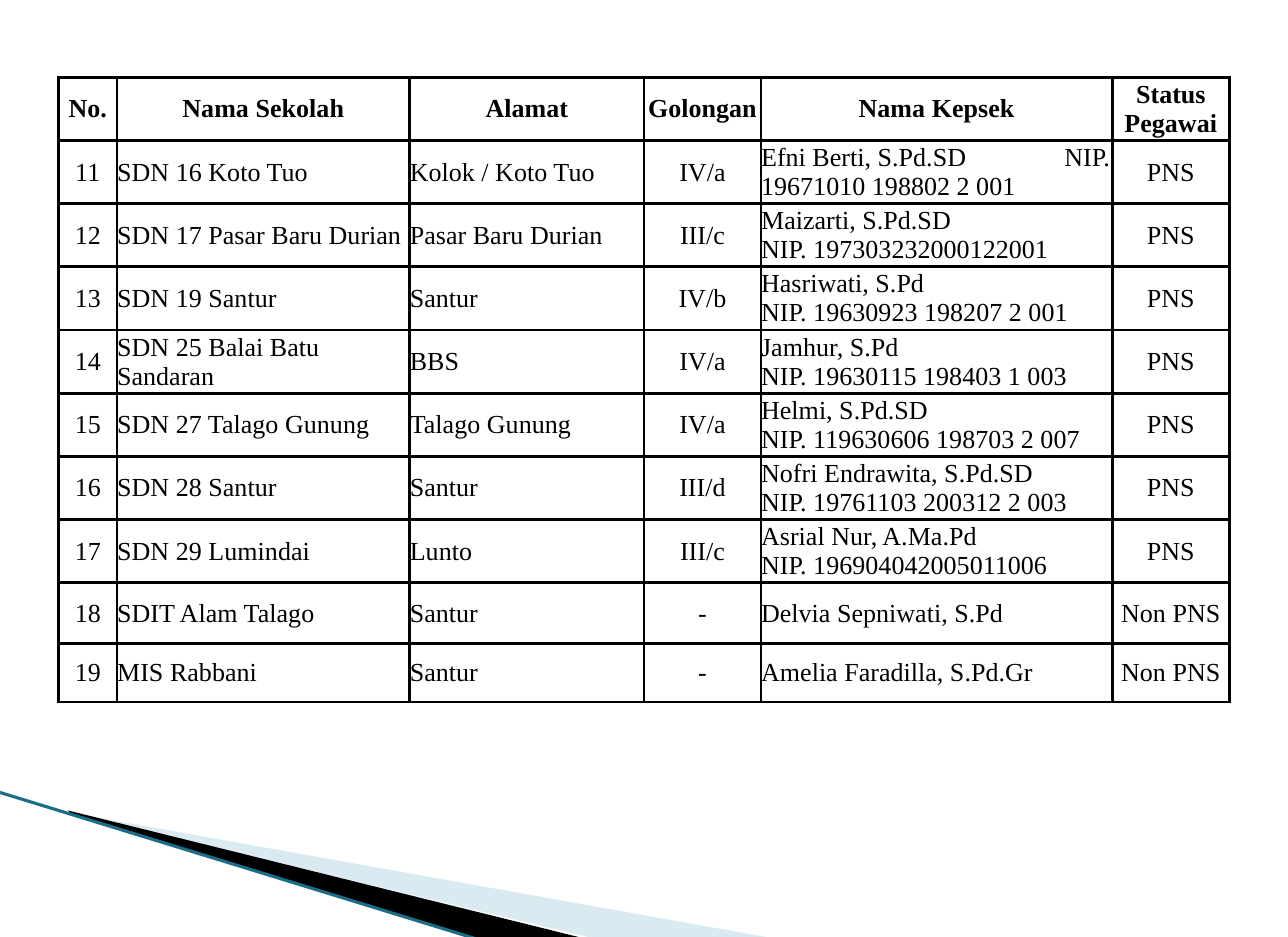
import pptx
import pptx.dml.color
import pptx.enum.text
import pptx.oxml
import pptx.oxml.ns
import pptx.util

Inches = pptx.util.Inches
Pt = pptx.util.Pt
RGBColor = pptx.dml.color.RGBColor
ALIGN = pptx.enum.text.PP_ALIGN

BLACK = RGBColor(0x00, 0x00, 0x00)
PALE_BLUE = RGBColor(0xA0, 0xCB, 0xDC)
TEAL = RGBColor(0x1B, 0x6E, 0x86)
FONT = "Times New Roman"
NS = pptx.oxml.ns.nsdecls("a")

COLUMN_WIDTHS = [0.25, 1.25, 1, 0.5, 1.5, 0.5]
ROW_HEIGHTS = [0.27] * 8 + [0.26, 0.25]
LEFT_COLUMNS = {1, 2, 4}
HEADERS = ["No.", "Nama Sekolah", "Alamat", "Golongan", "Nama Kepsek",
           "Status Pegawai"]
FIRST_NUMBER = 11
# School, address, grade, headmaster, employment status
SCHOOLS = [
    ("SDN 16 Koto Tuo", "Kolok / Koto Tuo", "IV/a",
     "Efni Berti, S.Pd.SD\tNIP.\n19671010 198802 2 001", "PNS"),
    ("SDN 17 Pasar Baru Durian", "Pasar Baru Durian", "III/c",
     "Maizarti, S.Pd.SD\nNIP. 197303232000122001", "PNS"),
    ("SDN 19 Santur", "Santur", "IV/b",
     "Hasriwati, S.Pd\nNIP. 19630923 198207 2 001", "PNS"),
    ("SDN 25 Balai Batu Sandaran", "BBS", "IV/a",
     "Jamhur, S.Pd\nNIP. 19630115 198403 1 003", "PNS"),
    ("SDN 27 Talago Gunung", "Talago Gunung", "IV/a",
     "Helmi, S.Pd.SD\nNIP. 119630606 198703 2 007", "PNS"),
    ("SDN 28 Santur", "Santur", "III/d",
     "Nofri Endrawita, S.Pd.SD\nNIP. 19761103 200312 2 003", "PNS"),
    ("SDN 29 Lumindai", "Lunto", "III/c",
     "Asrial Nur, A.Ma.Pd\nNIP. 196904042005011006", "PNS"),
    ("SDIT Alam Talago", "Santur", "-", "Delvia Sepniwati, S.Pd", "Non PNS"),
    ("MIS Rabbani", "Santur", "-", "Amelia Faradilla, S.Pd.Gr", "Non PNS"),
]


def write_text(frame, text, *, bold=False, align=ALIGN.LEFT, size=8,
               color=BLACK, tab_at=1.49):
    """Write one paragraph per line; a tab sends text to a right tab stop."""
    frame.text = text
    for paragraph in frame.paragraphs:
        paragraph.alignment = align
        if "\t" in paragraph.text:
            paragraph._p.get_or_add_pPr().append(pptx.oxml.parse_xml(
                f'<a:tabLst {NS}><a:tab pos="{Inches(tab_at)}" algn="r"/>'
                '</a:tabLst>'))
        for run in paragraph.runs:
            run.font.name = FONT
            run.font.size = Pt(size)
            run.font.bold = bold
            run.font.color.rgb = color


def add_wedge(slide, points, color, opacity=100):
    builder = slide.shapes.build_freeform(
        Inches(points[0][0]), Inches(points[0][1]))
    builder.add_line_segments([(Inches(x), Inches(y)) for x, y in points[1:]])
    wedge = builder.convert_to_shape()
    wedge.shadow.inherit = False
    wedge.line.fill.background()
    wedge.fill.solid()
    wedge.fill.fore_color.rgb = color
    if opacity < 100:
        color_element = wedge._element.spPr.find(
            ".//" + pptx.oxml.ns.qn("a:srgbClr"))
        color_element.append(pptx.oxml.parse_xml(
            f'<a:alpha {NS} val="{opacity * 1000}"/>'))


def add_edge_line(slide, start, end):
    edge = slide.shapes.add_connector(
        pptx.enum.shapes.MSO_CONNECTOR.STRAIGHT,
        *(Inches(value) for value in start + end))
    edge.line.color.rgb = TEAL
    edge.line.width = Pt(0.95)
    edge._element.spPr.append(pptx.oxml.parse_xml(f"<a:effectLst {NS}/>"))


def set_borders(cell, width=1):
    properties = cell._tc.get_or_add_tcPr()
    for side in "LRTB":
        properties.append(pptx.oxml.parse_xml(
            f'<a:ln{side} {NS} w="{Pt(width)}"><a:solidFill>'
            f'<a:srgbClr val="{BLACK}"/></a:solidFill></a:ln{side}>'))


def add_school_table(slide):
    rows = [HEADERS] + [(str(number), *school) for number, school
                        in enumerate(SCHOOLS, FIRST_NUMBER)]
    table = slide.shapes.add_table(
        len(rows), len(HEADERS), Inches(0.25), Inches(0.33),
        Inches(sum(COLUMN_WIDTHS)), Inches(sum(ROW_HEIGHTS))).table
    table.first_row = table.horz_banding = False
    for column, width in zip(table.columns, COLUMN_WIDTHS):
        column.width = Inches(width)
    for r, (row, height) in enumerate(zip(rows, ROW_HEIGHTS)):
        table.rows[r].height = Inches(height)
        for c, text in enumerate(row):
            cell = table.cell(r, c)
            cell.margin_left = cell.margin_right = 0
            cell.margin_top = cell.margin_bottom = 0
            cell.vertical_anchor = pptx.enum.text.MSO_ANCHOR.MIDDLE
            set_borders(cell)
            cell.fill.background()
            is_left = r > 0 and c in LEFT_COLUMNS
            write_text(cell.text_frame, text, bold=r == 0,
                       align=ALIGN.LEFT if is_left else ALIGN.CENTER)


def main():
    presentation = pptx.Presentation()
    presentation.slide_width = Inches(5.5)
    presentation.slide_height = Inches(4)
    slide = presentation.slides.add_slide(presentation.slide_layouts[6])

    # Corner decoration
    add_wedge(slide, [(0.3, 3.47), (3.27, 4), (2.51, 4)], PALE_BLUE, 40)
    add_wedge(slide, [(0.29, 3.46), (2.51, 4.01), (2.05, 4.01), (0.3, 3.47)],
              BLACK)
    add_edge_line(slide, (-0.01, 3.38), (2.04, 4.01))

    # Schools and headmasters
    add_school_table(slide)

    presentation.save("out.pptx")


if __name__ == "__main__":
    main()
